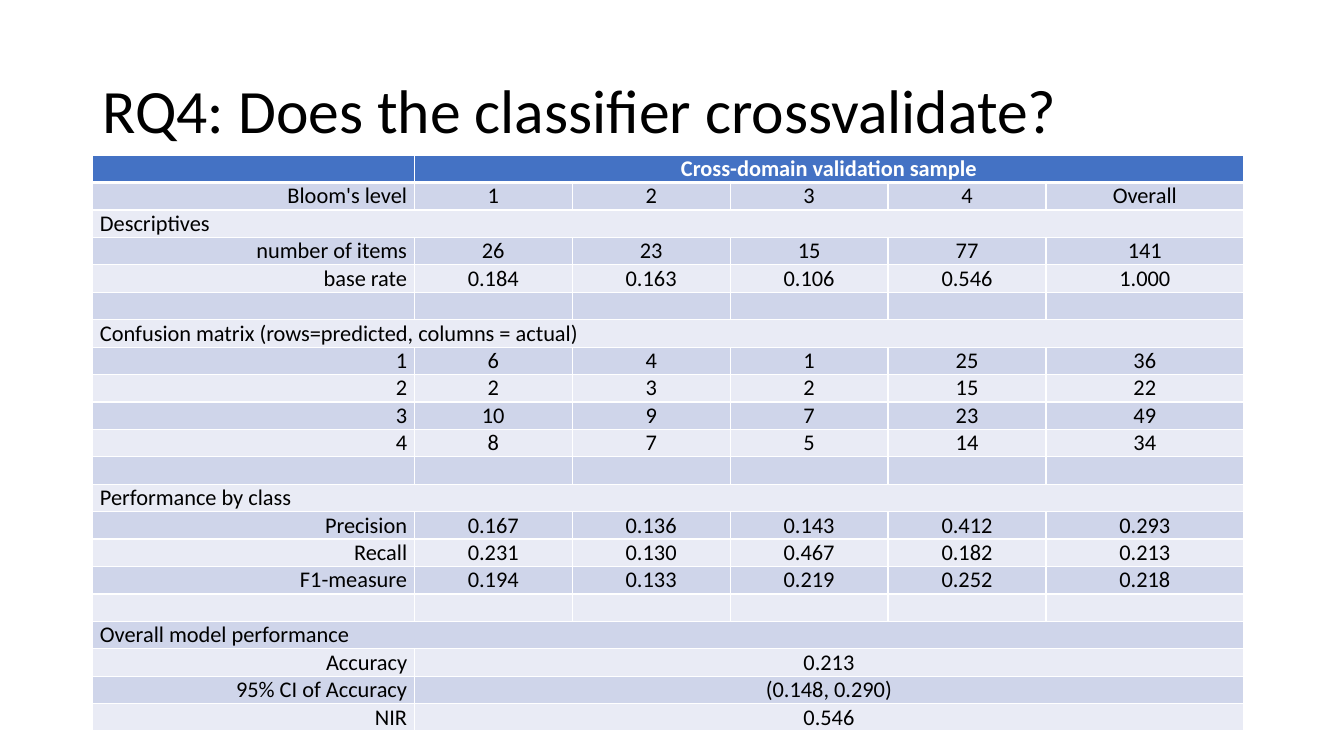
from lxml.etree import SubElement
from pptx import Presentation
from pptx.dml.color import RGBColor
from pptx.enum.text import MSO_ANCHOR, PP_ALIGN
from pptx.oxml.ns import qn
from pptx.util import Cm, Pt

TITLE = "RQ4: Does the classifier crossvalidate?"
ROWS = [
    ["", "Cross-domain validation sample"],
    ["Bloom's level", "1", "2", "3", "4", "Overall"],
    ["Descriptives"],
    ["number of items", "26", "23", "15", "77", "141"],
    ["base rate", "0.184", "0.163", "0.106", "0.546", "1.000"],
    [],
    ["Confusion matrix (rows=predicted, columns = actual)"],
    ["1", "6", "4", "1", "25", "36"],
    ["2", "2", "3", "2", "15", "22"],
    ["3", "10", "9", "7", "23", "49"],
    ["4", "8", "7", "5", "14", "34"],
    [],
    ["Performance by class"],
    ["Precision", "0.167", "0.136", "0.143", "0.412", "0.293"],
    ["Recall", "0.231", "0.130", "0.467", "0.182", "0.213"],
    ["F1-measure", "0.194", "0.133", "0.219", "0.252", "0.218"],
    [],
    ["Overall model performance"],
    ["Accuracy", "0.213"],
    ["95% CI of Accuracy", "(0.148, 0.290)"],
    ["NIR", "0.546"],
]
COL_WIDTHS = [8.1, 3.98, 3.98, 3.98, 3.98, 4.98]
ROW_HEIGHT = 0.68

BLACK = RGBColor(0x00, 0x00, 0x00)
WHITE = RGBColor(0xFF, 0xFF, 0xFF)
HEADER = RGBColor(0x44, 0x72, 0xC4)
BANDS = [RGBColor(0xE9, 0xEB, 0xF5), RGBColor(0xCF, 0xD5, 0xEA)]


def write(tf, text, size=16, color=BLACK, bold=False, align=PP_ALIGN.LEFT, spacing=None):
    p = tf.paragraphs[0]
    p.alignment = align
    p.line_spacing = spacing
    if not text:
        SubElement(p._p, qn("a:endParaRPr"), sz=str(size * 100))
        return
    r = p.add_run()
    r.text = text
    r.font.name = "Calibri"
    r.font.size = Pt(size)
    r.font.bold = bold
    r.font.color.rgb = color


def add_border(cell, side, width):
    ln = SubElement(cell._tc.get_or_add_tcPr(), qn(f"a:{side}"), w=str(Pt(width)))
    SubElement(SubElement(ln, qn("a:solidFill")), qn("a:srgbClr"), val=str(WHITE))


def format_cell(cell, i):
    cell.margin_left = cell.margin_right = Cm(0.18)
    cell.margin_top = cell.margin_bottom = 0
    cell.vertical_anchor = MSO_ANCHOR.BOTTOM
    add_border(cell, "lnL", 1)
    add_border(cell, "lnR", 1)
    add_border(cell, "lnT", 3 if i == 1 else 1)
    add_border(cell, "lnB", 3 if i == 0 else 1)
    cell.fill.solid()
    cell.fill.fore_color.rgb = BANDS[i % 2] if i else HEADER


def add_results(s):
    n = len(COL_WIDTHS)
    tbl = s.shapes.add_table(len(ROWS), n, Cm(2.34), Cm(3.91),
                             Cm(sum(COL_WIDTHS)), Cm(ROW_HEIGHT * len(ROWS))).table
    for col, width in zip(tbl.columns, COL_WIDTHS):
        col.width = Cm(width)
    for i, values in enumerate(ROWS):
        tbl.rows[i].height = Cm(ROW_HEIGHT)
        if 0 < len(values) < n:
            tbl.cell(i, len(values) - 1).merge(tbl.cell(i, n - 1))
        label_align = PP_ALIGN.LEFT if len(values) == 1 else PP_ALIGN.RIGHT
        for j in range(n):
            cell = tbl.cell(i, j)
            format_cell(cell, i)
            write(cell.text_frame, values[j] if j < len(values) else "",
                  color=BLACK if i else WHITE, bold=i == 0,
                  align=PP_ALIGN.CENTER if j else label_align)


def main():
    prs = Presentation()
    prs.slide_width, prs.slide_height = Cm(33.87), Cm(19.05)
    s = prs.slides.add_slide(prs.slide_layouts[5])
    title = s.shapes.title
    title.left, title.top, title.width, title.height = Cm(2.33), Cm(1.01), Cm(29.21), Cm(3.68)
    title.text_frame.vertical_anchor = MSO_ANCHOR.MIDDLE
    write(title.text_frame, TITLE, size=44, spacing=0.9)
    add_results(s)
    prs.save("out.pptx")


if __name__ == "__main__":
    main()
